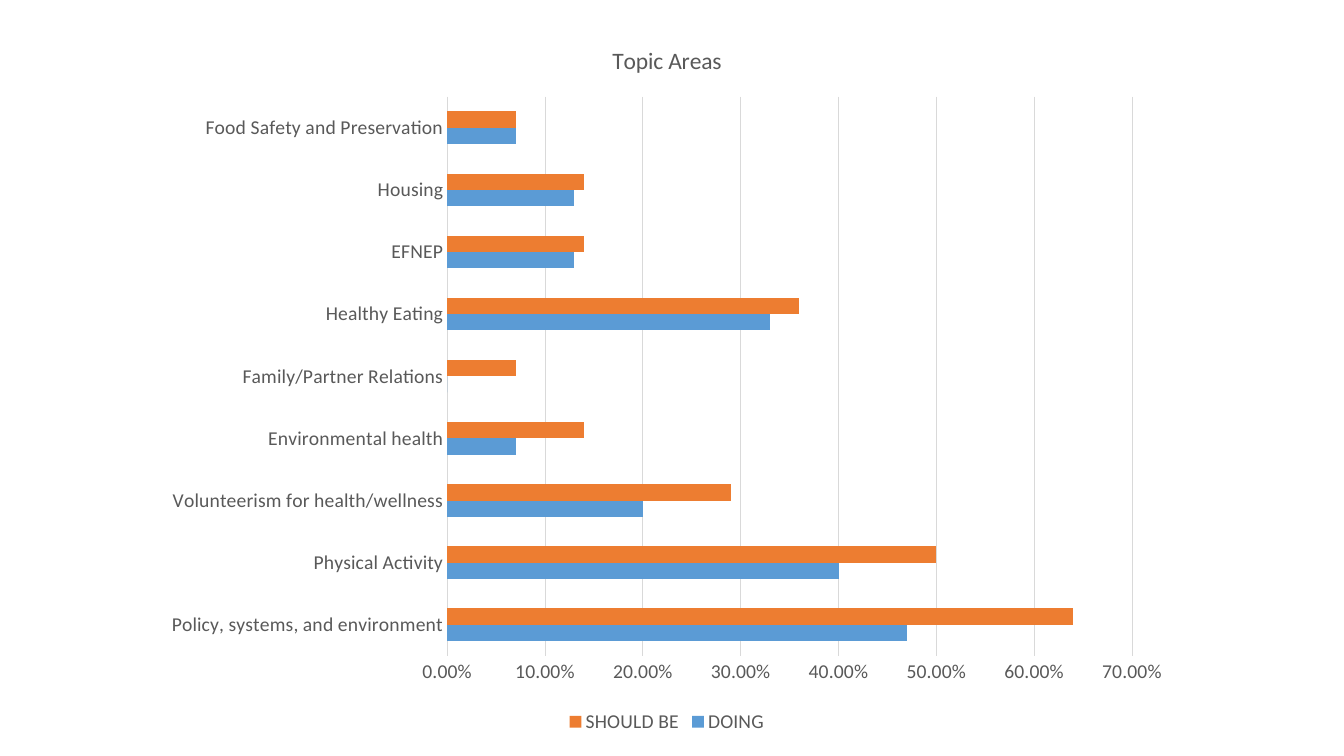
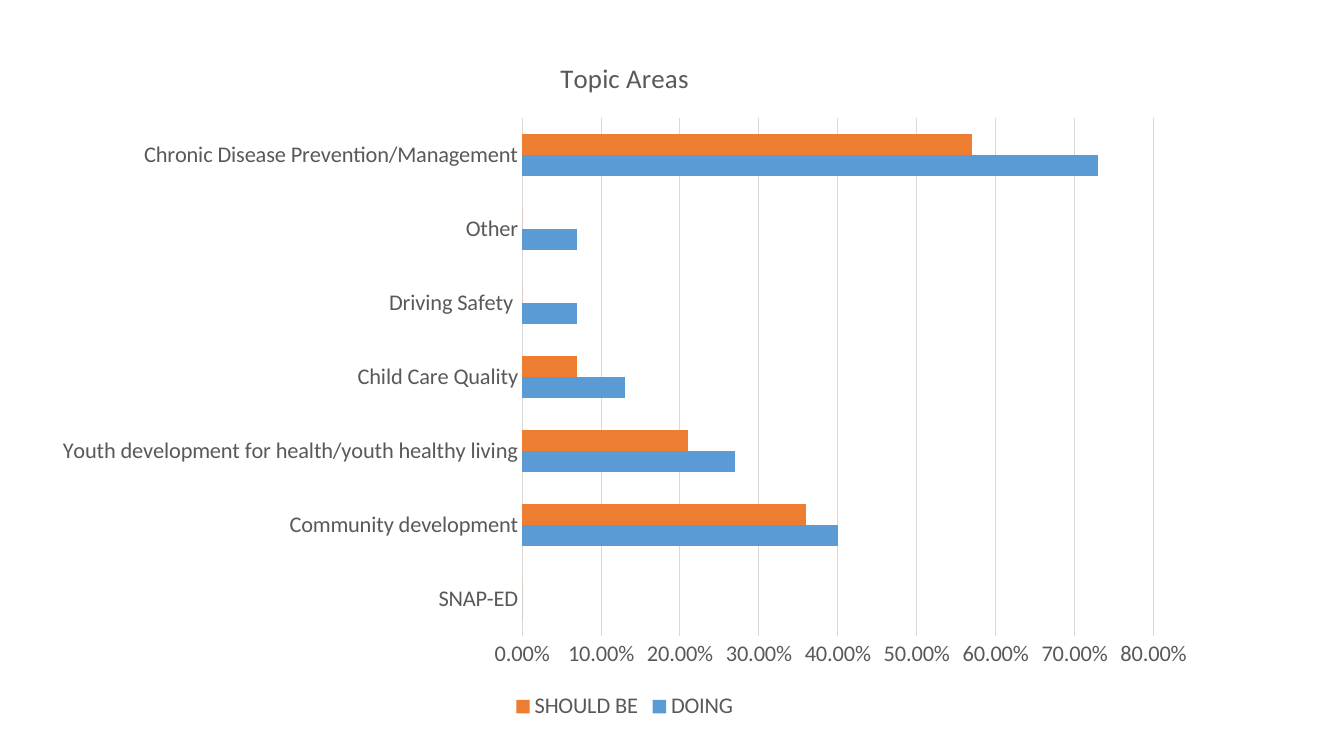
"""Build two slides of bar charts comparing current and desired topic areas."""
from pptx import Presentation
from pptx.chart.data import CategoryChartData
from pptx.dml.color import RGBColor
from pptx.enum.chart import XL_CHART_TYPE as ChartType
from pptx.enum.chart import XL_LEGEND_POSITION as LegendPosition
from pptx.enum.chart import XL_TICK_MARK as TickMark
from pptx.util import Inches, Pt

BLUE = RGBColor(0x5B, 0x9B, 0xD5)
ORANGE = RGBColor(0xED, 0x7D, 0x31)
TEXT_GRAY = RGBColor(0x59, 0x59, 0x59)
LINE_GRAY = RGBColor(0xD9, 0xD9, 0xD9)
FONT = "Calibri"
TITLE = "Topic Areas"
TITLE_SCALE = 1.2
LINE_WIDTH = Pt(0.75)
PERCENT = "0.00%"
SERIES_COLORS = {"DOING": BLUE, "SHOULD BE": ORANGE}

CHARTS = [
    {
        "frame_percent": (11.25, 2.67, 76.74, 94.93),
        "font_size": 14,
        "gap_width": 182,
        "axis_maximum": 0.7,
        "topics": [
            ("Policy, systems, and environment", 0.47, 0.64),
            ("Physical Activity", 0.4, 0.5),
            ("Volunteerism for health/wellness", 0.2, 0.29),
            ("Environmental health", 0.07, 0.14),
            ("Family/Partner Relations", 0, 0.07),
            ("Healthy Eating", 0.33, 0.36),
            ("EFNEP", 0.13, 0.14),
            ("Housing", 0.13, 0.14),
            ("Food Safety and Preservation", 0.07, 0.07),
        ],
    },
    {
        "frame_percent": (2.93, 4.67, 87.1, 91.2),
        "font_size": 16,
        "gap_width": 150,
        "axis_maximum": 0.8,
        "topics": [
            ("SNAP-ED", 0, 0),
            ("Community development", 0.4, 0.36),
            ("Youth development for health/youth healthy living", 0.27, 0.21),
            ("Child Care Quality", 0.13, 0.07),
            ("Driving Safety ", 0.07, 0),
            ("Other", 0.07, 0),
            ("Chronic Disease Prevention/Management", 0.73, 0.57),
        ],
    },
]


def style_font(font, size):
    font.name = FONT
    font.size = Pt(size)
    font.bold = False
    font.color.rgb = TEXT_GRAY


def style_line(line):
    line.color.rgb = LINE_GRAY
    line.width = LINE_WIDTH


presentation = Presentation()
presentation.slide_width = Inches(13.33)
presentation.slide_height = Inches(7.5)
blank_layout = presentation.slide_layouts[6]
slide_size = (presentation.slide_width, presentation.slide_height) * 2

for settings in CHARTS:
    slide = presentation.slides.add_slide(blank_layout)
    topics, *values_by_series = zip(*settings["topics"])
    chart_data = CategoryChartData(number_format=PERCENT)
    chart_data.categories = topics
    for name, values in zip(SERIES_COLORS, values_by_series):
        chart_data.add_series(name, values)

    frame = [
        int(length * percent / 100)
        for length, percent in zip(slide_size, settings["frame_percent"])
    ]
    chart = slide.shapes.add_chart(ChartType.BAR_CLUSTERED, *frame, chart_data).chart
    font_size = settings["font_size"]
    style_font(chart.font, font_size)

    chart.has_title = True
    chart.chart_title.include_in_layout = False
    paragraph = chart.chart_title.text_frame.paragraphs[0]
    paragraph.text = TITLE
    style_font(paragraph.runs[0].font, font_size * TITLE_SCALE)

    chart.has_legend = True
    chart.legend.position = LegendPosition.BOTTOM
    chart.legend.include_in_layout = False
    style_font(chart.legend.font, font_size)

    plot = chart.plots[0]
    plot.gap_width = settings["gap_width"]
    plot.overlap = 0
    plot.vary_by_categories = False
    for series in plot.series:
        series.invert_if_negative = False
        series.format.fill.solid()
        series.format.fill.fore_color.rgb = SERIES_COLORS[series.name]

    for axis in (chart.category_axis, chart.value_axis):
        axis.major_tick_mark = TickMark.NONE
        axis.minor_tick_mark = TickMark.NONE
        style_font(axis.tick_labels.font, font_size)
    style_line(chart.category_axis.format.line)

    value_axis = chart.value_axis
    value_axis.minimum_scale = 0
    value_axis.maximum_scale = settings["axis_maximum"]
    value_axis.major_unit = 0.1
    value_axis.tick_labels.number_format = PERCENT
    value_axis.tick_labels.number_format_is_linked = False
    value_axis.format.line.fill.background()
    value_axis.has_major_gridlines = True
    style_line(value_axis.major_gridlines.format.line)

presentation.save("out.pptx")
